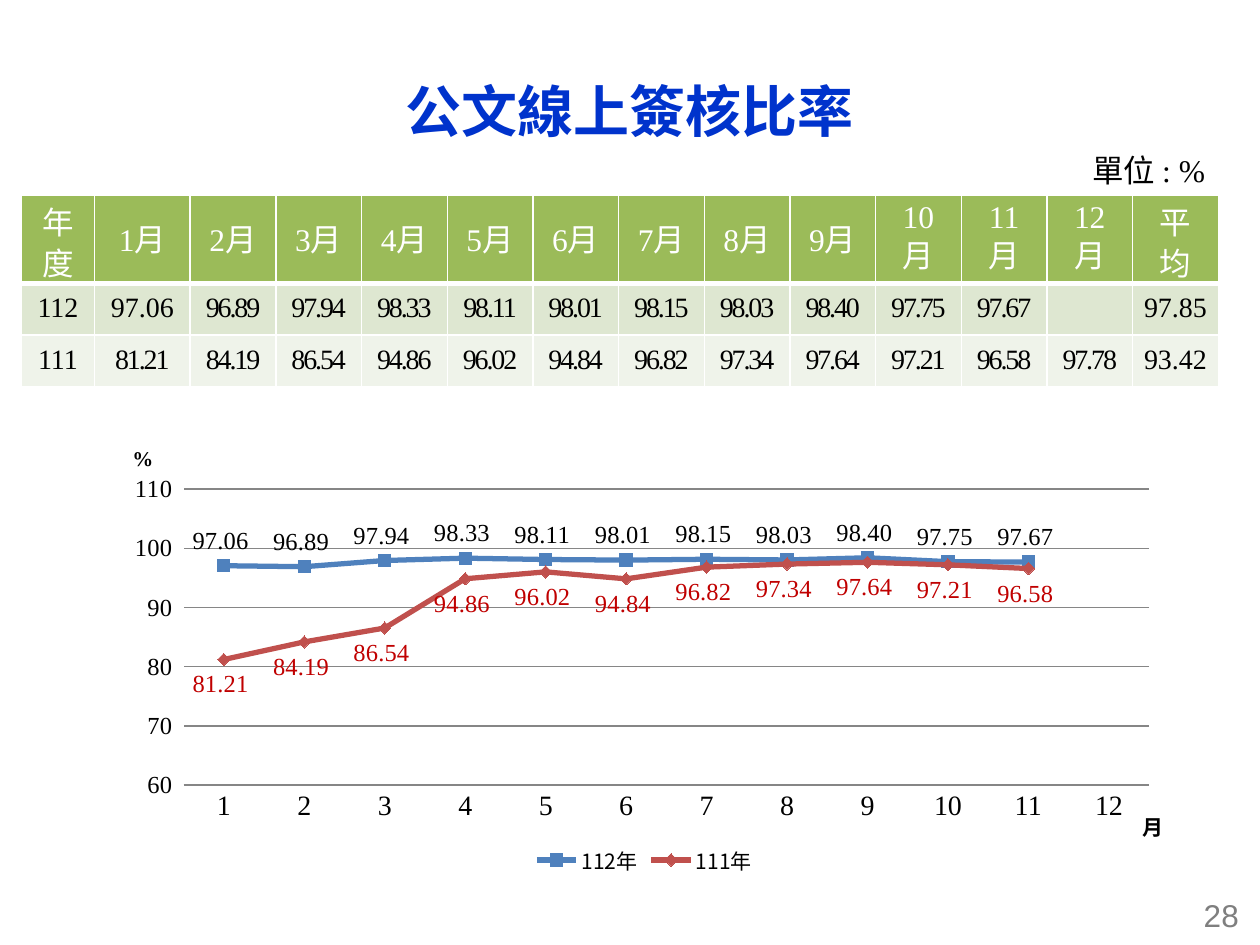
import pptx
import pptx.chart.data
import pptx.dml.color
import pptx.enum.chart
import pptx.enum.text
import pptx.oxml
import pptx.oxml.ns
import pptx.util
from pptx.util import Inches

RGBColor = pptx.dml.color.RGBColor
WHITE = RGBColor(0xFF, 0xFF, 0xFF)
BLACK = RGBColor(0, 0, 0)
TITLE_BLUE = RGBColor(0x00, 0x33, 0xCC)
GREY = RGBColor(0x7F, 0x7F, 0x7F)
GRID_GREY = RGBColor(0x86, 0x86, 0x86)
HEADER_GREEN = RGBColor(0x9B, 0xBB, 0x59)
BAND_GREENS = [RGBColor(0xDE, 0xE7, 0xD1), RGBColor(0xEF, 0xF3, 0xEA)]
LINE_BLUE = RGBColor(0x4F, 0x81, 0xBD)
LINE_RED = RGBColor(0xC0, 0x50, 0x4D)
LABEL_RED = RGBColor(0xC0, 0, 0)
SERIF = "Times New Roman"
SANS = "Noto Sans CJK SC"

ALIGN = pptx.enum.text.PP_ALIGN
MIDDLE = pptx.enum.text.MSO_ANCHOR.MIDDLE
LABEL_POSITION = pptx.enum.chart.XL_LABEL_POSITION
MARKER = pptx.enum.chart.XL_MARKER_STYLE
MONTHS = [str(month) for month in range(1, 13)]
RATES = {
    "112": [97.06, 96.89, 97.94, 98.33, 98.11, 98.01, 98.15, 98.03, 98.40, 97.75, 97.67, None],
    "111": [81.21, 84.19, 86.54, 94.86, 96.02, 94.84, 96.82, 97.34, 97.64, 97.21, 96.58, 97.78],
}
AVERAGES = {"112": 97.85, "111": 93.42}


def style_font(font, size, name=SERIF, color=BLACK, bold=False):
    font.size = pptx.util.Pt(size)
    font.name = name
    font.color.rgb = color
    font.bold = bold


def write_text(frame, text, size, name=SERIF, color=BLACK, bold=False,
               align=ALIGN.LEFT, line_spacing=None, tracking=0):
    paragraph = frame.paragraphs[0]
    paragraph.alignment = align
    paragraph.line_spacing = line_spacing
    run = paragraph.add_run()
    run.text = text
    style_font(run.font, size, name, color, bold)
    properties = run.font._element
    if tracking:
        properties.set("spc", str(tracking))
    east_asian = pptx.oxml.parse_xml(
        f'<a:ea {pptx.oxml.ns.nsdecls("a")} typeface="{SANS}"/>')
    properties.find(pptx.oxml.ns.qn("a:latin")).addnext(east_asian)


def add_label(slide, box, text, anchor=pptx.enum.text.MSO_ANCHOR.TOP, **text_format):
    frame = slide.shapes.add_textbox(*box).text_frame
    frame.word_wrap = True
    frame.vertical_anchor = anchor
    write_text(frame, text, **text_format)


def place_title(slide, box, text):
    title = slide.shapes.title
    title.left, title.top, title.width, title.height = box
    title.text_frame.vertical_anchor = MIDDLE
    write_text(title.text_frame, text, 32, name=SANS, color=TITLE_BLUE, bold=True,
               align=ALIGN.CENTER, line_spacing=0.9)


def set_borders(cell, bottom_width):
    properties = cell._tc.get_or_add_tcPr()
    widths = {"lnL": 1, "lnR": 1, "lnT": 1, "lnB": bottom_width}
    for index, (side, width) in enumerate(widths.items()):
        properties.insert(index, pptx.oxml.parse_xml(
            f'<a:{side} {pptx.oxml.ns.nsdecls("a")} w="{pptx.util.Pt(width)}">'
            f'<a:solidFill><a:srgbClr val="{WHITE}"/></a:solidFill></a:{side}>'))


def format_cell(cell, text, fill, bottom_width=1, margins=(0.1, 0.05), **text_format):
    cell.fill.solid()
    cell.fill.fore_color.rgb = fill
    cell.vertical_anchor = MIDDLE
    cell.margin_left = cell.margin_right = Inches(margins[0])
    cell.margin_top = cell.margin_bottom = Inches(margins[1])
    set_borders(cell, bottom_width)
    if text:
        write_text(cell.text_frame, text, align=ALIGN.CENTER, line_spacing=0.9, **text_format)


def add_rate_table(slide, box):
    headers = ["年度"] + [f"{month}月" for month in MONTHS] + ["平均"]
    table = slide.shapes.add_table(len(RATES) + 1, len(headers), *box).table
    for index, column in enumerate(table.columns):
        column.width = Inches({0: 0.58, 1: 0.76}.get(index, 0.68))
    for index, row in enumerate(table.rows):
        row.height = Inches(0.41 if index else 0.7)
    for index, header in enumerate(headers):
        format_cell(table.cell(0, index), header, HEADER_GREEN, bottom_width=3,
                    size=18, color=WHITE)
    for row, (year, rates) in enumerate(RATES.items(), start=1):
        fill = BAND_GREENS[row - 1]
        format_cell(table.cell(row, 0), year, fill, size=16)
        for column, rate in enumerate(rates, start=1):
            text = "" if rate is None else f"{rate:.2f}"
            tracking = 0 if (row, column) == (1, 1) else -120
            format_cell(table.cell(row, column), text, fill, size=16, tracking=tracking)
        format_cell(table.cell(row, len(headers) - 1), f"{AVERAGES[year]:.2f}", fill,
                    margins=(0.01, 0), size=16)


def make_layout(left, top, width=None, height=None):
    parts = {"xMode": "edge", "yMode": "edge", "x": left, "y": top}
    if width:
        parts = {"layoutTarget": "inner", **parts, "w": width, "h": height}
    children = "".join(f'<c:{tag} val="{value}"/>' for tag, value in parts.items())
    return pptx.oxml.parse_xml(
        f'<c:layout {pptx.oxml.ns.nsdecls("c")}><c:manualLayout>{children}'
        '</c:manualLayout></c:layout>')


def add_axis_title(axis, text, name, left, top):
    frame = axis.axis_title.text_frame
    write_text(frame, text, 12, name=name, bold=True)
    body = frame._txBody.find(pptx.oxml.ns.qn("a:bodyPr"))
    body.set("rot", "0")
    body.set("vert", "horz")
    title = axis.axis_title._element
    for layout in title.findall(pptx.oxml.ns.qn("c:layout")):
        title.remove(layout)
    title.find(pptx.oxml.ns.qn("c:tx")).addnext(make_layout(left, top))


def format_axes(chart):
    category_axis, value_axis = chart.category_axis, chart.value_axis
    for axis, size in ((category_axis, 16), (value_axis, 14)):
        axis.major_tick_mark = pptx.enum.chart.XL_TICK_MARK.NONE
        axis.minor_tick_mark = pptx.enum.chart.XL_TICK_MARK.NONE
        style_font(axis.tick_labels.font, size)
    category_axis.format.line.color.rgb = GRID_GREY
    value_axis.format.line.fill.background()
    value_axis.minimum_scale, value_axis.maximum_scale = 60, 110
    value_axis.major_unit = 10
    value_axis.tick_labels.number_format = r"0_);\(0\)"
    value_axis.tick_labels.number_format_is_linked = False
    value_axis.major_gridlines.format.line.color.rgb = GRID_GREY
    add_axis_title(category_axis, "月", SANS, 0.95, 0.84)
    add_axis_title(value_axis, "%", SERIF, 0.03, 0.08)


def format_series(series, color, marker, label_color, label_position):
    series.smooth = False
    series.format.line.color.rgb = color
    series.format.line.width = pptx.util.Pt(3)
    series.marker.style = marker
    series.marker.size = 7
    series.marker.format.fill.solid()
    series.marker.format.fill.fore_color.rgb = color
    series.marker.format.line.color.rgb = color
    labels = series.data_labels
    labels.show_value = True
    labels.position = label_position
    labels.number_format = "#,##0.00_ "
    labels.number_format_is_linked = False
    style_font(labels.font, 14, color=label_color)


def add_rate_chart(slide, box):
    data = pptx.chart.data.CategoryChartData()
    data.categories = MONTHS
    for year, rates in RATES.items():
        data.add_series(f"{year}年", rates[:11] + [None])
    chart = slide.shapes.add_chart(
        pptx.enum.chart.XL_CHART_TYPE.LINE_MARKERS, *box, data).chart
    style_font(chart.font, 10, name="Calibri")
    chart.has_title = False
    chart.has_legend = True
    chart.legend.position = pptx.enum.chart.XL_LEGEND_POSITION.BOTTOM
    chart.legend.include_in_layout = False
    style_font(chart.legend.font, 12, name=SANS)
    format_axes(chart)
    plot = chart.plots[0]
    plot.vary_by_categories = False
    format_series(plot.series[0], LINE_BLUE, MARKER.SQUARE, BLACK, LABEL_POSITION.ABOVE)
    format_series(plot.series[1], LINE_RED, MARKER.DIAMOND, LABEL_RED, LABEL_POSITION.BELOW)
    plot_area = chart._chartSpace.chart.plotArea
    for layout in plot_area.findall(pptx.oxml.ns.qn("c:layout")):
        plot_area.remove(layout)
    plot_area.insert(0, make_layout(0.08, 0.18, 0.88, 0.62))


def inch_box(*lengths):
    return [Inches(length) for length in lengths]


def main():
    presentation = pptx.Presentation()
    presentation.slide_width, presentation.slide_height = Inches(10), Inches(7.5)
    slide = presentation.slides.add_slide(presentation.slide_layouts[5])
    place_title(slide, inch_box(0, 0.43, 10, 0.95), "公文線上簽核比率")
    add_label(slide, inch_box(8.57, 1.15, 1.24, 0.4), "單位 : %", size=18)
    add_rate_table(slide, inch_box(0.17, 1.55, 9.54, 1.52))
    add_rate_chart(slide, inch_box(0.76, 3.2, 8.71, 3.79))
    add_label(slide, inch_box(7.6, 7.06, 2.33, 0.4), "28", anchor=MIDDLE, size=18,
              name="Arial", color=GREY, align=ALIGN.RIGHT)
    presentation.save("out.pptx")


if __name__ == "__main__":
    main()
